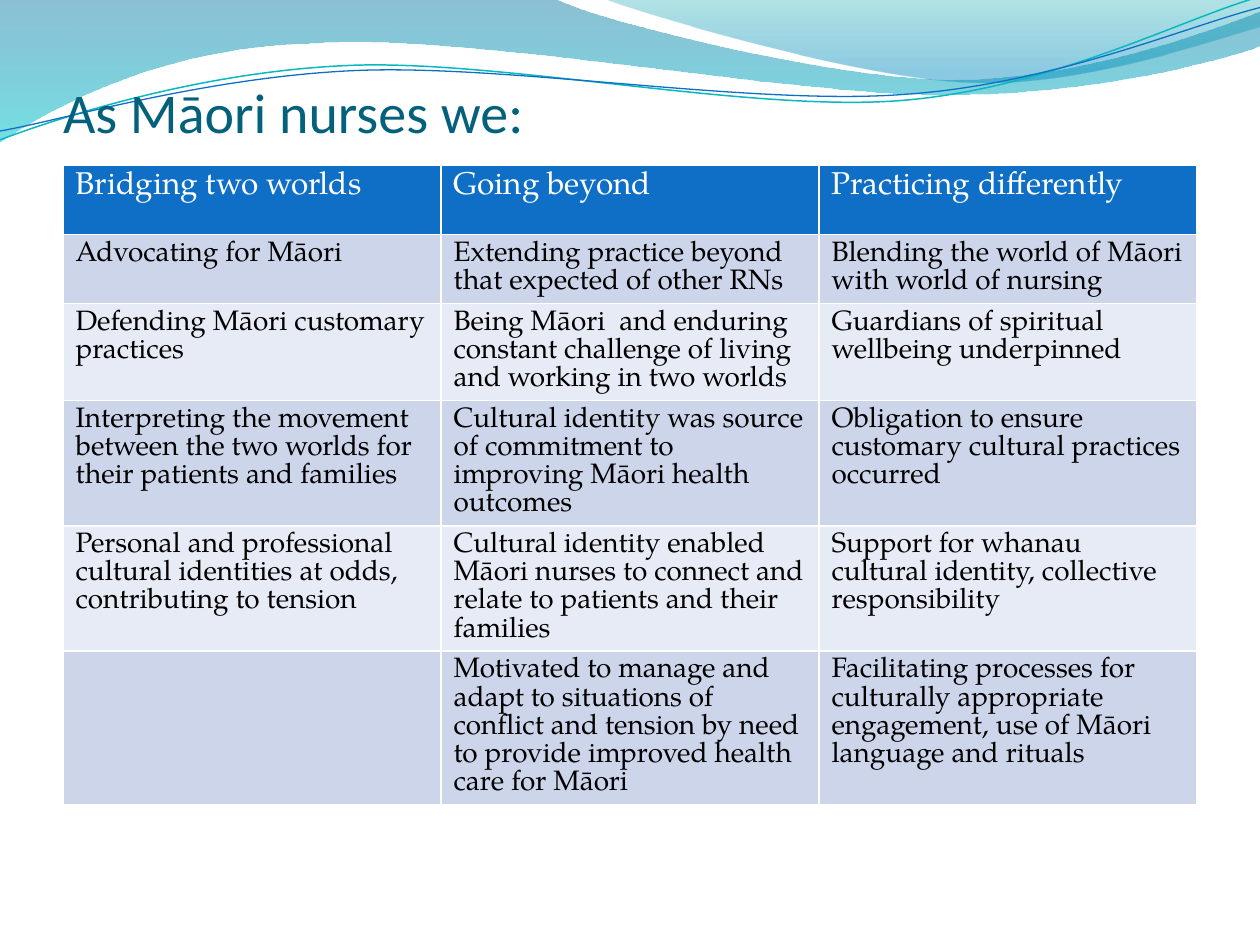
from lxml.etree import SubElement
from pptx import Presentation
from pptx.dml.color import RGBColor
from pptx.enum.text import MSO_ANCHOR, PP_ALIGN
from pptx.oxml.ns import qn
from pptx.util import Inches, Pt

COLORS = {"title": "04617B", "header": "0F6FC6", "odd": "CCD5EA", "even": "E7EBF5",
          "white": "FFFFFF", "black": "000000"}
TITLE = "As Māori nurses we:"
ROWS = [
    ("Bridging two worlds", "Going beyond", "Practicing differently"),
    ("Advocating for Māori",
     "Extending practice beyond that expected of other RNs",
     "Blending the world of Māori with world of nursing"),
    ("Defending Māori customary practices",
     "Being Māori  and enduring constant challenge of living and working in two worlds",
     "Guardians of spiritual wellbeing underpinned"),
    ("Interpreting the movement between the two worlds for their patients and families",
     "Cultural identity was source of commitment to improving Māori health outcomes",
     "Obligation to ensure customary cultural practices occurred"),
    ("Personal and professional cultural identities at odds, contributing to tension",
     "Cultural identity enabled Māori nurses to connect and relate to patients and their families",
     "Support for whanau cultural identity, collective responsibility"),
    ("",
     "Motivated to manage and adapt to situations of conflict and tension by need to provide "
     "improved health care for Māori",
     "Facilitating processes for culturally appropriate engagement, use of Māori language "
     "and rituals"),
]
HEADER_HEIGHT, ROW_HEIGHT = 0.55, 0.41
WAVES = [
    {"outline": [(0, 0), (4.4, -0.01), (4.76, 0.17, 6.64, 0.63, 7.58, 0.63),
                 (8.53, 0.63, 9.58, 0.26, 10, 0.09), (10.01, 0.36),
                 (9.83, 0.44, 8.7, 0.76, 7.46, 0.75), (6.22, 0.75, 3.82, 0.28, 2.57, 0.34),
                 (1.29, 0.36, 0.46, 0.83, -0.01, 1.13), (0, 0)],
     "stops": [(0, "0074A1", 45), (1, "00C6CF", 55)]},
    {"outline": [(4.79, -0.01), (5.09, 0.11, 6.82, 0.62, 7.69, 0.65),
                 (8.56, 0.69, 9.61, 0.32, 10, 0.21), (10, 0), (4.79, -0.01)],
     "stops": [(0, "00A1A9", 30), (0.8, "008BBF", 45)]},
    {"outline": [(0, 1.11), (0.48, 0.93, 1.58, 0.57, 2.77, 0.52),
                 (3.95, 0.47, 5.93, 0.89, 7.13, 0.8), (8.33, 0.71, 9.38, 0.15, 9.98, -0.02)],
     "line": ("0AB8BF", 0.85)},
    {"outline": [(0, 1.04), (0.47, 0.96, 1.64, 0.61, 2.83, 0.56),
                 (4.03, 0.51, 5.97, 0.84, 7.17, 0.75), (8.36, 0.67, 9.41, 0.21, 10, 0.06)],
     "line": ("0F6FC6", 0.75)},
]


def rgb(value):
    return RGBColor.from_string(value)


def apply(target, values):
    for name, value in values.items():
        setattr(target, name, value)


def add_curve(page, outline, close):
    points = [(Inches(part[i]), Inches(part[i + 1]))
              for part in outline for i in range(0, len(part), 2)]
    builder = page.shapes.build_freeform(*points[0], scale=1.0)
    builder.add_line_segments(points[1:], close=close)
    shape = builder.convert_to_shape()
    segments = iter(list(shape._element.iter(qn("a:lnTo"))))
    for part in outline[1:]:
        first = next(segments)
        if len(part) == 6:
            first.tag_name = None
            curve = first.makeelement(qn("a:cubicBezTo"))
            first.addprevious(curve)
            for segment in (first, next(segments), next(segments)):
                curve.append(segment[0])
                segment.getparent().remove(segment)
    return shape


def add_wave(page, outline, stops=None, line=None):
    wave = add_curve(page, outline, close=bool(stops))
    wave.shadow.inherit = False
    if line:
        wave.fill.background()
        wave.line.color.rgb = rgb(line[0])
        wave.line.width = Pt(line[1])
        return
    wave.line.fill.background()
    wave.fill.gradient()
    wave.fill.gradient_angle = 270
    for stop, (position, color, _) in zip(wave.fill.gradient_stops, stops):
        stop.position = position
        stop.color.rgb = rgb(color)
    for color, (_, _, opacity) in zip(wave._element.spPr.iter(qn("a:srgbClr")), stops):
        SubElement(color, qn("a:alpha"), val=str(opacity * 1000))


def add_title(page):
    title = page.shapes.title
    apply(title, {"left": Inches(0.5), "top": Inches(0.36),
                  "width": Inches(9), "height": Inches(0.79)})
    frame = title.text_frame
    apply(frame, {"text": TITLE, "vertical_anchor": MSO_ANCHOR.BOTTOM, "margin_left": 0,
                  "margin_top": Inches(0.05), "margin_right": 0, "margin_bottom": 0})
    para = frame.paragraphs[0]
    para.alignment = PP_ALIGN.LEFT
    apply(para.runs[0].font, {"size": Pt(32), "name": "Calibri"})
    para.runs[0].font.color.rgb = rgb(COLORS["title"])
    page.shapes._spTree.append(title._element)


def format_cell(cell, text, fill, color, size):
    cell.text = text
    properties = cell._tc.get_or_add_tcPr()
    for side in ("lnL", "lnR", "lnT", "lnB"):
        border = SubElement(properties, qn(f"a:{side}"), w=str(Pt(1)))
        SubElement(SubElement(border, qn("a:solidFill")), qn("a:srgbClr"), val=COLORS["white"])
    cell.fill.solid()
    cell.fill.fore_color.rgb = rgb(COLORS[fill])
    for span in cell.text_frame.paragraphs[0].runs:
        apply(span.font, {"size": Pt(size), "name": "TeX Gyre Pagella", "bold": False})
        span.font.color.rgb = rgb(COLORS[color])


def add_grid(page):
    holder = page.shapes.add_table(len(ROWS), len(ROWS[0]), Inches(0.5), Inches(1.31),
                                   Inches(9), Inches(5.58))
    table = holder.table
    for index, texts in enumerate(ROWS):
        table.rows[index].height = Inches(ROW_HEIGHT if index else HEADER_HEIGHT)
        if index == 0:
            style = ("header", "white", 18)
        else:
            style = ("odd" if index % 2 else "even", "black", 16)
        for column, text in enumerate(texts):
            format_cell(table.cell(index, column), text, *style)
    holder.height = Inches(5.58)


def main():
    """Build the slide on how Māori nurses practise."""
    deck = Presentation()
    apply(deck, {"slide_width": Inches(10), "slide_height": Inches(7.5)})
    page = deck.slides.add_slide(deck.slide_layouts[5])
    for wave in WAVES:
        add_wave(page, **wave)
    add_title(page)
    add_grid(page)
    deck.save("out.pptx")


if __name__ == "__main__":
    main()
